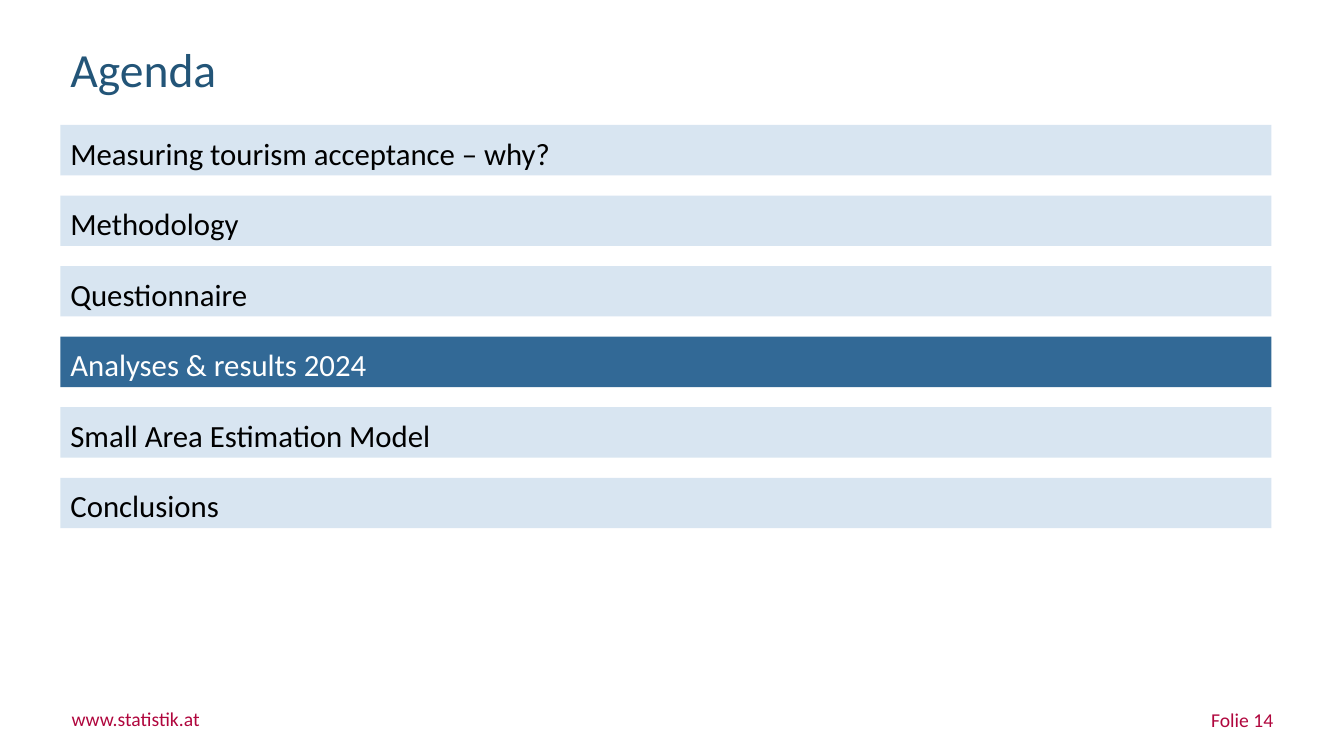
from dataclasses import dataclass

from pptx import Presentation
from pptx.dml.color import RGBColor
from pptx.enum.shapes import MSO_SHAPE
from pptx.enum.text import MSO_ANCHOR, PP_ALIGN
from pptx.util import Inches, Pt


@dataclass(frozen=True)
class Theme:
    font: str = "Calibri"
    title: str = "235578"
    footer: str = "B0063D"
    bar: str = "D8E5F1"
    bar_text: str = "000000"
    active_bar: str = "326996"
    active_text: str = "FFFFFF"
    title_size: int = 34
    bar_size: int = 22
    footer_size: int = 14


theme = Theme()


def write(s, text, size, color, align=PP_ALIGN.LEFT, spacing=1.0, wrap=True):
    tf = s.text_frame
    tf.word_wrap = wrap
    tf.vertical_anchor = MSO_ANCHOR.TOP
    p = tf.paragraphs[0]
    p.alignment = align
    p.line_spacing = spacing
    r = p.add_run()
    r.text = text
    r.font.name = theme.font
    r.font.size = Pt(size)
    r.font.color.rgb = RGBColor.from_string(color)


prs = Presentation()
prs.slide_width = Inches(13.33)
prs.slide_height = Inches(7.5)
slide = prs.slides.add_slide(prs.slide_layouts[6])

# Footer
footers = [
    ("www.statistik.at", 0.71, 7.01, 1.29, PP_ALIGN.LEFT, False),
    ("Folie 14", 9.63, 7.02, 3, PP_ALIGN.RIGHT, True),
]
for text, left, top, width, align, wrap in footers:
    s = slide.shapes.add_textbox(Inches(left), Inches(top), Inches(width), Inches(0.24))
    tf = s.text_frame
    tf.margin_left = tf.margin_right = tf.margin_top = tf.margin_bottom = 0
    write(s, text, theme.footer_size, theme.footer, align, wrap=wrap)

# Title
left, width = Inches(0.6), Inches(12.01)
s = slide.shapes.add_textbox(left, Inches(0.41), width, Inches(0.62))
write(s, "Agenda", theme.title_size, theme.title, spacing=0.9)

# Agenda bars, with the current topic highlighted
topics = [
    "Measuring tourism acceptance – why?",
    "Methodology",
    "Questionnaire",
    "Analyses & results 2024",
    "Small Area Estimation Model",
    "Conclusions",
]
current = "Analyses & results 2024"
for i, topic in enumerate(topics):
    active = topic == current
    s = slide.shapes.add_shape(
        MSO_SHAPE.RECTANGLE, left, Inches(1.24 + 0.7 * i), width, Inches(0.5)
    )
    s.shadow.inherit = False
    s.fill.solid()
    s.fill.fore_color.rgb = RGBColor.from_string(theme.active_bar if active else theme.bar)
    s.line.fill.background()
    color = theme.active_text if active else theme.bar_text
    write(s, topic, theme.bar_size, color, spacing=1.12)

prs.save("out.pptx")
